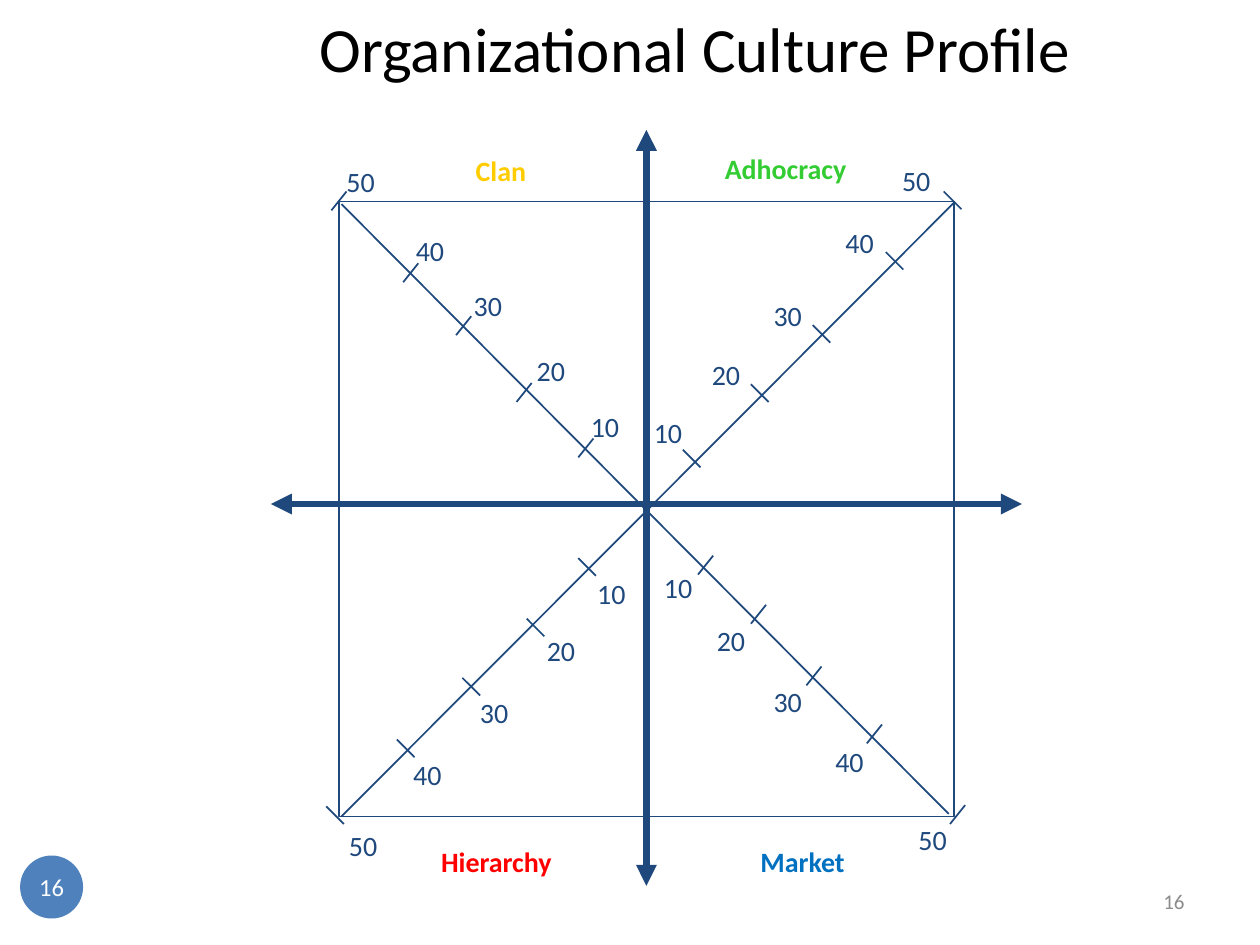
from lxml.etree import SubElement
from pptx import Presentation
from pptx.dml.color import RGBColor as RGB
from pptx.enum.shapes import MSO_CONNECTOR as LINK, MSO_SHAPE as SHAPE
from pptx.enum.text import MSO_ANCHOR as ANCHOR, MSO_AUTO_SIZE as FIT, PP_ALIGN as ALIGN
from pptx.oxml.ns import qn
from pptx.util import Inches, Pt

NAVY = RGB(0x1F, 0x49, 0x7D)
BLUE = RGB(0x4F, 0x81, 0xBD)
GRAY = RGB(0x8C, 0x8C, 0x8C)
WHITE = RGB(0xFF, 0xFF, 0xFF)
BLACK = RGB(0, 0, 0)
GOLD = RGB(0xFF, 0xCC, 0x00)
GREEN = RGB(0x33, 0xCC, 0x33)
AZURE = RGB(0x00, 0x70, 0xC0)
RED = RGB(0xFF, 0x00, 0x00)

FALL = (0.14, 0.14)
RISE = (0.12, -0.15)

# Quadrant: name, colour, name box (left, top, width)
NAMES = [
    ("Clan", GOLD, (3.37, 1.14, 1.21)),
    ("Adhocracy", GREEN, (5.24, 1.12, 1.99)),
    ("Market", AZURE, (5.67, 6.62, 1.4)),
    ("Hierarchy", RED, (3, 6.62, 1.88)),
]

# Scale arm: tick slant, tick starts and label corners for 10 to 50
ARMS = [
    (RISE,  # Clan
     [(4.59, 3.63), (4.1, 3.19), (3.62, 2.66), (3.2, 2.24), (2.63, 1.67)],
     [(4.53, 3.17), (4.1, 2.73), (3.6, 2.21), (3.14, 1.77), (2.59, 1.23)]),
    (FALL,  # Adhocracy
     [(5.42, 3.57), (5.96, 3.05), (6.45, 2.58), (7.03, 2), (7.49, 1.52)],
     [(5.03, 3.22), (5.49, 2.76), (5.98, 2.29), (6.55, 1.71), (7, 1.22)]),
    (RISE,  # Market
     [(5.54, 4.56), (5.96, 4.95), (6.4, 5.44), (6.88, 5.9), (7.54, 6.54)],
     [(5.11, 4.45), (5.53, 4.87), (5.98, 5.35), (6.47, 5.83), (7.13, 6.45)]),
    (FALL,  # Hierarchy
     [(4.59, 4.43), (4.18, 4.91), (3.67, 5.38), (3.15, 5.87), (2.59, 6.4)],
     [(4.58, 4.5), (4.18, 4.95), (3.65, 5.44), (3.12, 5.93), (2.61, 6.5)]),
]


def write(frame, text, size=16, color=NAVY, bold=False, align=ALIGN.LEFT,
          anchor=ANCHOR.TOP, pad=(0.16, 0.08), wrap=True, fit=FIT.NONE):
    frame.word_wrap = wrap
    frame.auto_size = fit
    frame.vertical_anchor = anchor
    frame.margin_left = frame.margin_right = Inches(pad[0])
    frame.margin_top = frame.margin_bottom = Inches(pad[1])
    para = frame.paragraphs[0]
    para.alignment = align
    run = para.add_run()
    run.text = text
    font = run.font
    font.name, font.size, font.bold = "Calibri", Pt(size), bold
    font.color.rgb = color


class Board:
    """Holds the current slide and the line style of the chart."""

    def __init__(self, slide, ink=NAVY, thin=1, thick=4):
        self.slide, self.shapes = slide, slide.shapes
        self.ink, self.thin, self.thick = ink, thin, thick

    def title(self, text, box, indent):
        shape = self.shapes.title
        shape.left, shape.top, shape.width, shape.height = map(Inches, box)
        write(shape.text_frame, text, size=36, color=BLACK, align=ALIGN.CENTER,
              anchor=ANCHOR.MIDDLE, pad=(0.1, 0.05))
        shape.text_frame.margin_left = Inches(indent)

    def label(self, text, box, **form):
        shape = self.shapes.add_textbox(*map(Inches, box))
        write(shape.text_frame, text, **form)

    def shape(self, kind, box, fill, line=None):
        shape = self.shapes.add_shape(kind, *map(Inches, box))
        shape.shadow.inherit = False
        shape.fill.solid()
        shape.fill.fore_color.rgb = fill
        if line is None:
            shape.line.fill.background()
        else:
            shape.line.color.rgb = line
            shape.line.width = Pt(self.thin)
        return shape

    def line(self, start, end, width=None):
        link = self.shapes.add_connector(LINK.STRAIGHT, *map(Inches, start + end))
        link.line.color.rgb = self.ink
        link.line.width = Pt(width or self.thin)
        SubElement(link._element.spPr, qn("a:effectLst"))
        return link

    def axis(self, start, end):
        """Draw a thick line with an arrowhead at both ends."""
        link = self.line(start, end, self.thick)
        for tag in ("a:headEnd", "a:tailEnd"):
            SubElement(link.line._get_or_add_ln(), qn(tag), type="triangle")

    def arm(self, slant, ticks, spots):
        for step, ((x, y), spot) in enumerate(zip(ticks, spots), 1):
            self.line((x, y), (x + slant[0], y + slant[1]))
            self.label(str(step * 10), spot + (0.7, 0.43), fit=FIT.SHAPE_TO_FIT_TEXT)


def main():
    deck = Presentation()
    deck.slide_width, deck.slide_height = Inches(10), Inches(7.5)
    board = Board(deck.slides.add_slide(deck.slide_layouts[5]))

    board.title("Organizational Culture Profile", (0.72, 0, 8.62, 0.75), indent=1.07)
    board.label("16", (7.17, 6.95, 2.33, 0.4), size=12, color=GRAY,
                align=ALIGN.RIGHT, anchor=ANCHOR.MIDDLE, pad=(0.1, 0.05))
    badge = board.shape(SHAPE.OVAL, (0.16, 6.79, 0.5, 0.5), BLUE)
    write(badge.text_frame, "16", size=14, color=WHITE, align=ALIGN.CENTER,
          anchor=ANCHOR.MIDDLE, pad=(0, 0), wrap=False)

    board.shape(SHAPE.RECTANGLE, (2.69, 1.6, 4.88, 4.88), WHITE, NAVY)
    board.axis((5.13, 1.03), (5.13, 7.03))
    board.axis((2.15, 4), (8.11, 4))
    board.line((2.71, 1.62), (7.53, 6.46))
    board.line((7.58, 1.6), (2.71, 6.48))

    for name, color, box in NAMES:
        board.label(name, box + (0.43,), color=color, bold=True,
                    align=ALIGN.CENTER, fit=FIT.SHAPE_TO_FIT_TEXT)
    for arm in ARMS:
        board.arm(*arm)

    deck.save("out.pptx")


if __name__ == "__main__":
    main()
